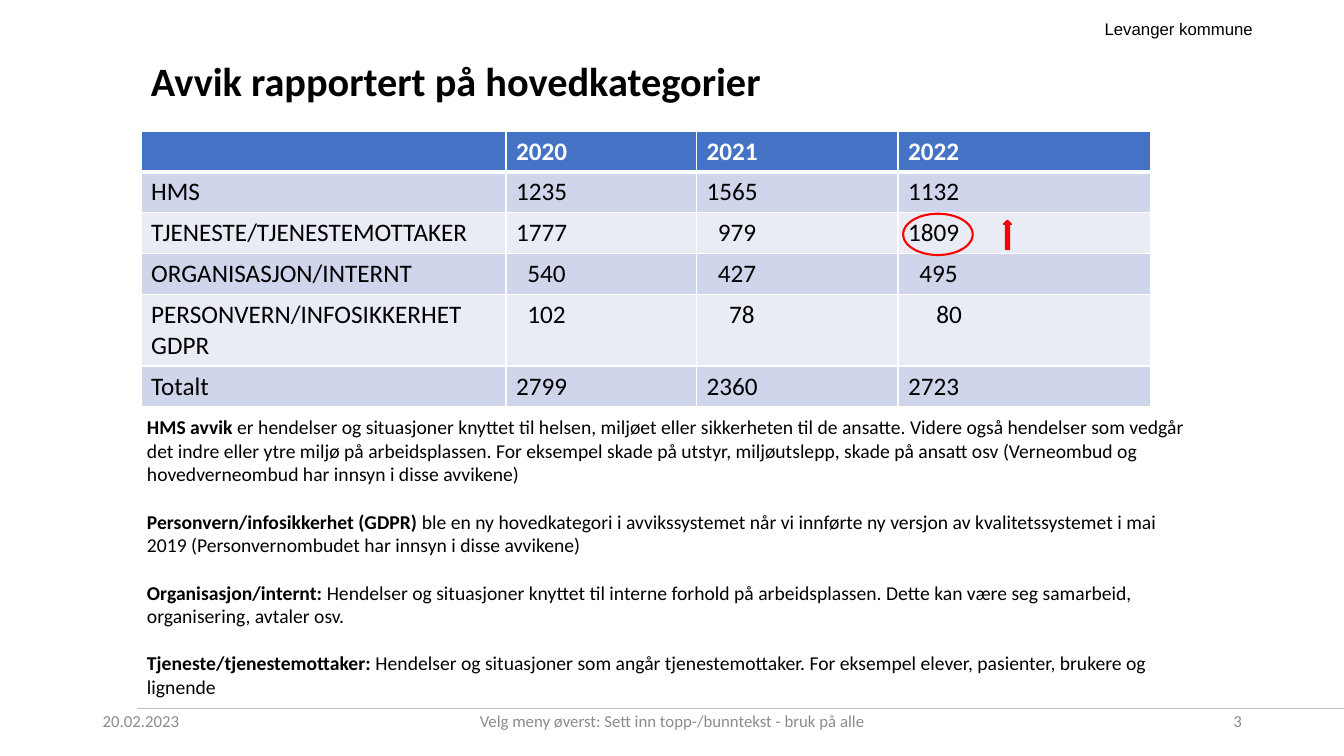
from pptx import Presentation
from pptx.util import Pt
from pptx.dml.color import RGBColor as Rgb
from pptx.enum.shapes import MSO_SHAPE as Shape, MSO_CONNECTOR as Link
from pptx.enum.text import PP_ALIGN as Align, MSO_ANCHOR as Anchor
from pptx.oxml.ns import qn
from lxml.etree import SubElement as Sub

TITLE = "Avvik rapportert på hovedkategorier"
OWNER = "Levanger kommune"
HEAD = ("", "2020", "2021", "2022")
ROWS = [
    ("HMS", "1235", "1565", "1132"),
    ("TJENESTE/TJENESTEMOTTAKER", "1777", "979", "1809"),
    ("ORGANISASJON/INTERNT", "540", "427", "495"),
    ("PERSONVERN/INFOSIKKERHET GDPR", "102", "78", "80"),
    ("Totalt", "2799", "2360", "2723"),
]
SHIFT = {"80": 4}
NOTES = [
    ("HMS avvik ", "er hendelser og situasjoner knyttet til helsen, miljøet eller sikkerheten til de ansatte. "
     "Videre også hendelser som vedgår det indre eller ytre miljø på arbeidsplassen. For eksempel skade på utstyr, "
     "miljøutslepp, skade på ansatt osv (Verneombud og hovedverneombud har innsyn i disse avvikene)"),
    ("Personvern/infosikkerhet (GDPR) ", "ble en ny hovedkategori i avvikssystemet når vi innførte ny versjon av "
     "kvalitetssystemet i mai 2019 (Personvernombudet har innsyn i disse avvikene)"),
    ("Organisasjon/internt: ", "Hendelser og situasjoner knyttet til interne forhold på arbeidsplassen. "
     "Dette kan være seg samarbeid, organisering, avtaler osv."),
    ("Tjeneste/tjenestemottaker: ", "Hendelser og situasjoner som angår tjenestemottaker. "
     "For eksempel elever, pasienter, brukere og lignende"),
]
FOOT = [
    ("20.02.2023", 66.24, 216, Align.LEFT),
    ("Velg meny øverst: Sett inn topp-/bunntekst - bruk på alle", 318.24, 324, Align.CENTER),
    ("3", 678.24, 216, Align.RIGHT),
]
THEME = {
    "font": "Calibri", "sans": "Arial",
    "black": "000000", "white": "FFFFFF", "gray": "8C8C8C", "rule": "BFBFBF",
    "blue": "4472C4", "bands": ("CFD5EA", "E9EBF5"), "red": "FF0000",
    "title": 28.8, "cell": 18, "body": 14, "small": 12,
}
COLS = (260.64, 136.08, 144, 180.72)
LINE, TALL = 29.2, 51.1
DIGIT = 8.1


def rgb(name):
    return Rgb.from_string(THEME.get(name, name))


def write(frame, text, size="body", color="black", font="font", bold=False, align=Align.LEFT, gap=0, space=None):
    frame.word_wrap = True
    paras = [text] if isinstance(text, str) else text
    for i, item in enumerate(paras):
        para = frame.add_paragraph() if i else frame.paragraphs[0]
        para.alignment = align
        if space:
            para.line_spacing = space
        if i:
            para.space_before = Pt(gap)
        parts = [(item, bold)] if isinstance(item, str) else [(item[0], True), (item[1], False)]
        for words, heavy in parts:
            run = para.add_run()
            run.text = words
            run.font.name = THEME[font]
            run.font.size = Pt(THEME[size])
            run.font.bold = heavy
            run.font.color.rgb = rgb(color)


def box(x, y, w, h, text, anchor=Anchor.TOP, **form):
    frame = slide.shapes.add_textbox(Pt(x), Pt(y), Pt(w), Pt(h)).text_frame
    frame.vertical_anchor = anchor
    write(frame, text, **form)
    return frame


def edge(cell, first):
    props = cell._tc.get_or_add_tcPr()
    for i, side in enumerate(("lnL", "lnR", "lnT", "lnB")):
        width = 3 if first and side == "lnB" else 1
        line = props.makeelement(qn("a:" + side), {"w": str(Pt(width))})
        Sub(Sub(line, qn("a:solidFill")), qn("a:srgbClr"), val=THEME["white"])
        props.insert(i, line)


def grid(x, y):
    data = [HEAD] + ROWS
    table = slide.shapes.add_table(len(data), len(HEAD), Pt(x), Pt(y), Pt(sum(COLS)), Pt(LINE * 5 + TALL)).table
    for col, width in zip(table.columns, COLS):
        col.width = Pt(width)
    for r, row in enumerate(data):
        table.rows[r].height = Pt(TALL if "GDPR" in row[0] else LINE)
        for c, text in enumerate(row):
            cell = table.cell(r, c)
            cell.fill.solid()
            cell.fill.fore_color.rgb = rgb(THEME["bands"][(r - 1) % 2] if r else "blue")
            edge(cell, r == 0)
            if c:
                cell.margin_left = Pt(7.2 + DIGIT * (4 - len(text)) + SHIFT.get(text, 0))
            write(cell.text_frame, text, size="cell", color="black" if r else "white", bold=r == 0)


def mark(kind, x, y, w, h, width, full):
    shape = slide.shapes.add_shape(kind, Pt(x), Pt(y), Pt(w), Pt(h))
    shape.shadow.inherit = False
    shape.line.color.rgb = rgb("red")
    shape.line.width = Pt(width)
    if full:
        shape.fill.solid()
        shape.fill.fore_color.rgb = rgb("red")
    else:
        shape.fill.background()


deck = Presentation()
deck.slide_width, deck.slide_height = Pt(960), Pt(540)
slide = deck.slides.add_slide(deck.slide_layouts[6])

rule = slide.shapes.add_connector(Link.STRAIGHT, Pt(97.92), Pt(506.16), Pt(960), Pt(506.16))
rule.line.color.rgb = rgb("rule")
rule.line.width = Pt(0.25)
Sub(rule._element.spPr, qn("a:effectLst"))

owner = box(781.92, 13.68, 173.52, 30.24, OWNER, size="small", font="sans")
owner.margin_top = 0
box(100.8, 28.8, 838.08, 61.2, TITLE, Anchor.MIDDLE, size="title", bold=True, space=0.9)
grid(100.8, 93.6)
for text, x, w, side in FOOT:
    box(x, 500.4, w, 28.8, text, Anchor.MIDDLE, size="small", color="gray", align=side)
box(97.92, 293.04, 761.76, 210.96, NOTES, gap=17)
mark(Shape.OVAL, 645.12, 152.64, 49.68, 29.52, 1.5, False)
mark(Shape.UP_ARROW, 716.76, 157.32, 5.76, 20.88, 1, True)

deck.save("out.pptx")
